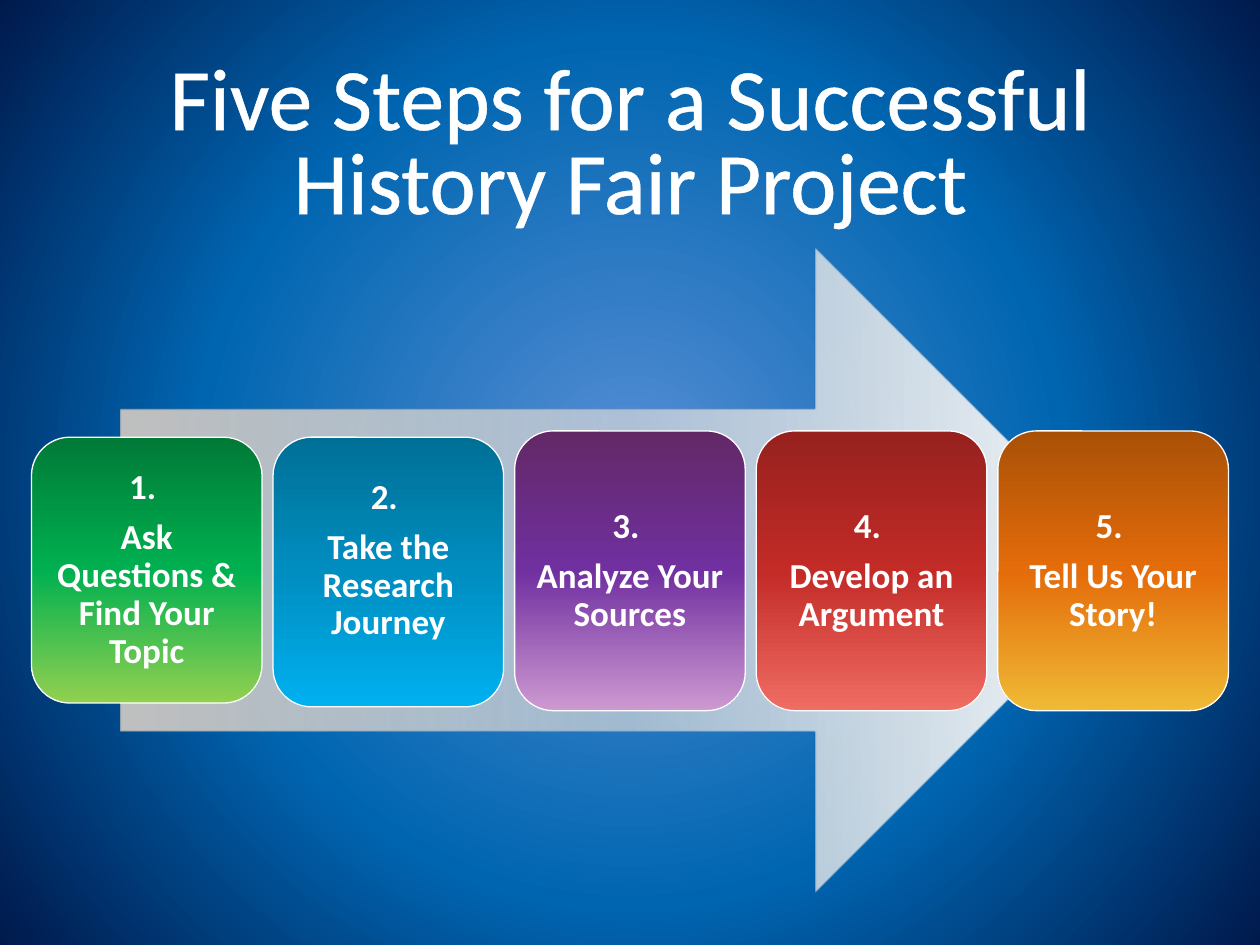
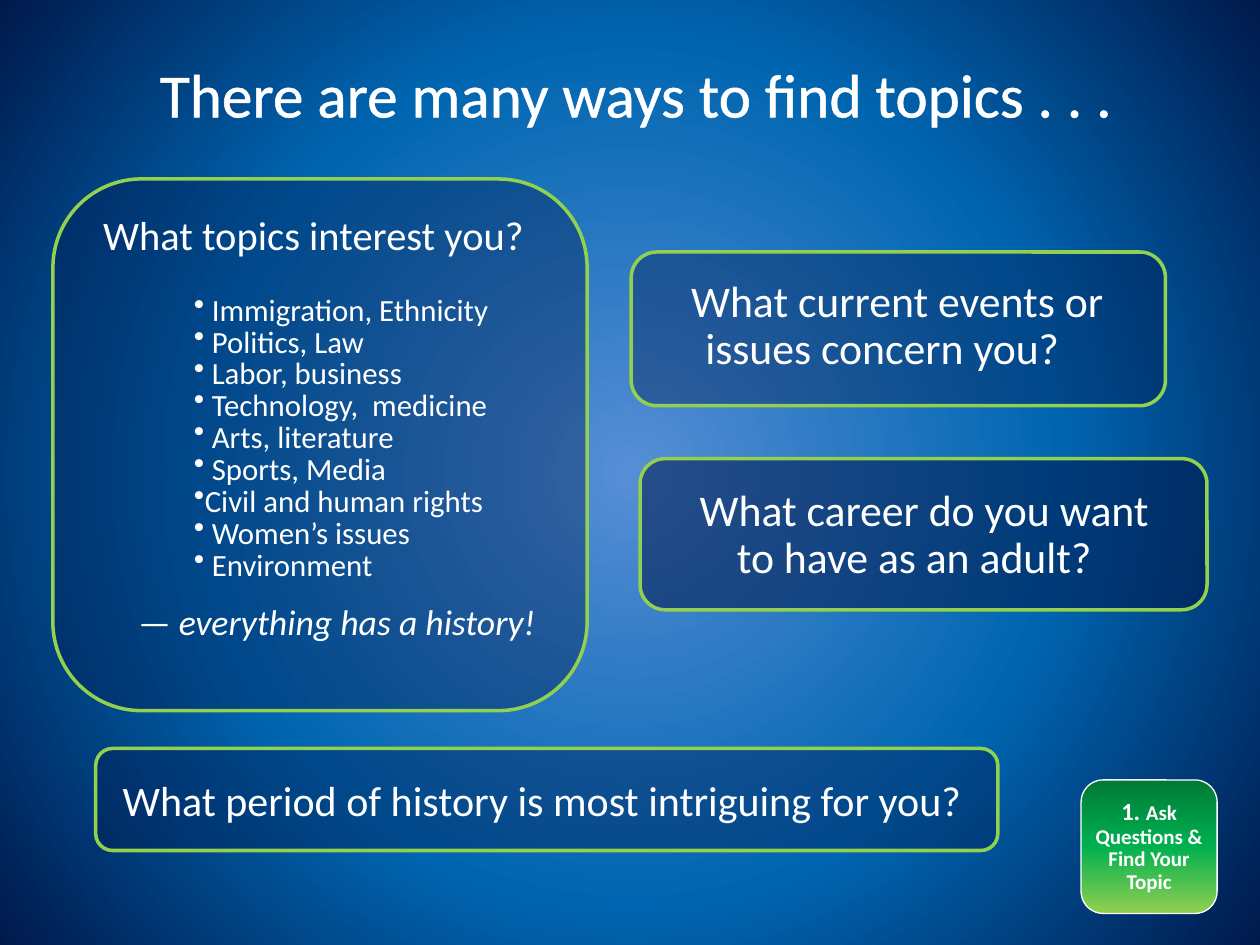
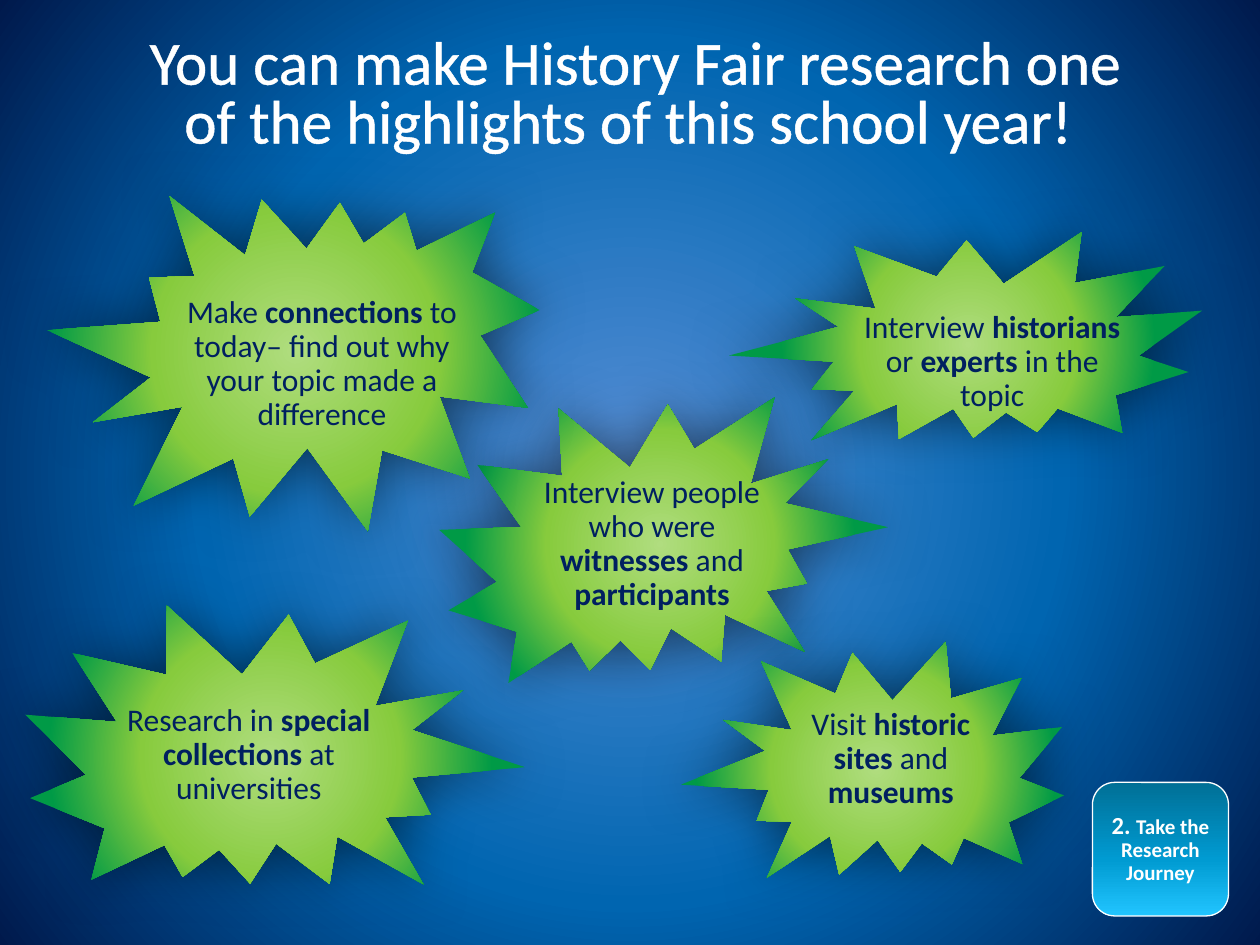
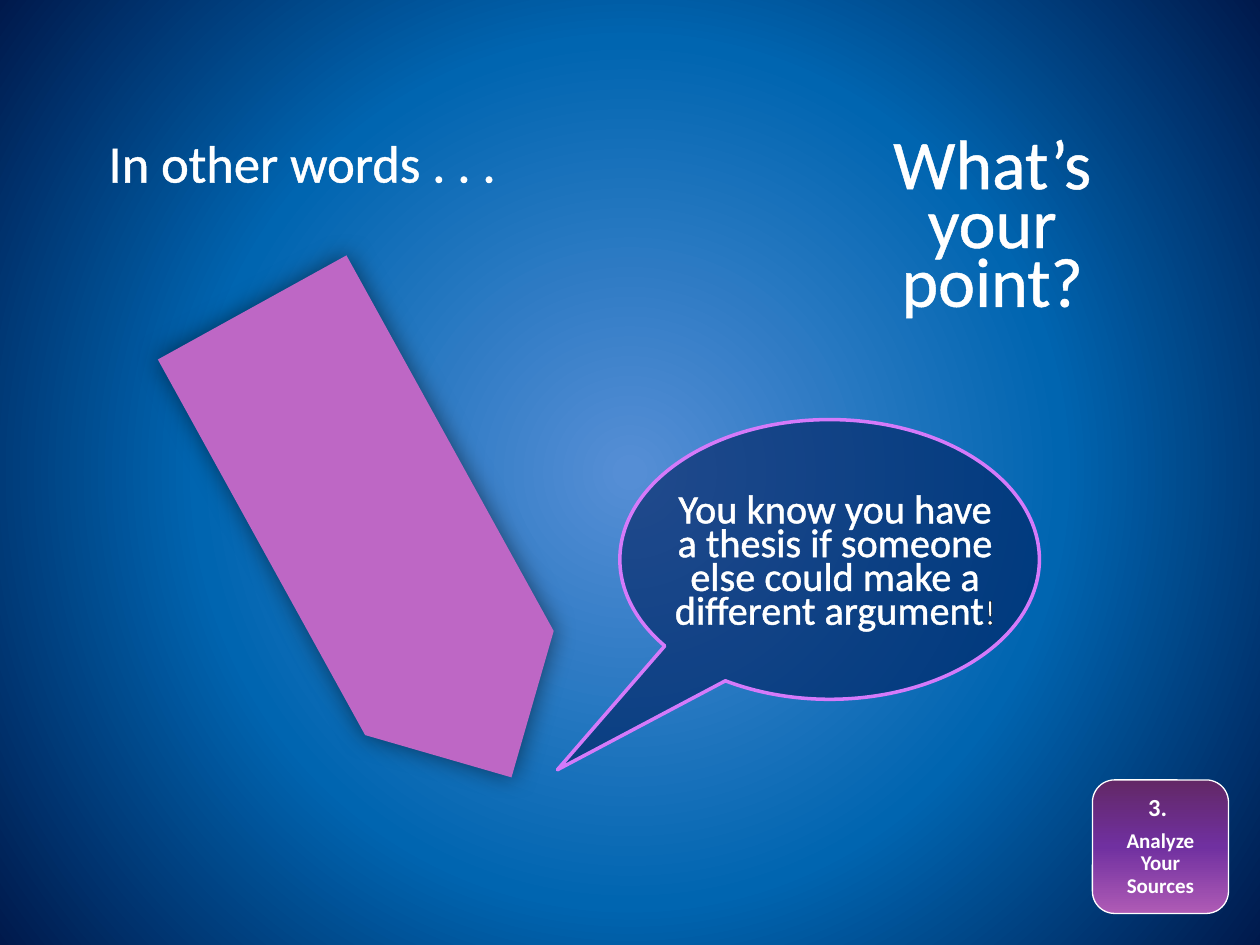
import pptx
import pptx.dml.color
import pptx.enum.shapes
import pptx.enum.text
import pptx.oxml
import pptx.oxml.ns
import pptx.util

Inches, Pt = pptx.util.Inches, pptx.util.Pt
SHAPE = pptx.enum.shapes.MSO_SHAPE
ALIGN = pptx.enum.text.PP_ALIGN
ANCHOR = pptx.enum.text.MSO_ANCHOR
qn = pptx.oxml.ns.qn
NS = pptx.oxml.ns.nsdecls("a", "p")
FONT = "Calibri"

COLORS = {
    "white": "FFFFFF", "black": "000000", "silver": "D9D9D9", "gray": "BFBFBF",
    "sky": "558ED5", "blue": "0065B0", "night": "00194C", "navy": "002060",
    "forest": "007A37", "green": "00B050", "lime": "92D050",
    "teal": "006F96", "azure": "008EC0", "cyan": "00B0F0",
    "azure_badge": "009BD2", "cyan_badge": "21C5FF",
    "plum": "622866", "purple": "7030A0", "lilac": "CD99D1", "orchid": "AF5BB5",
    "maroon": "96211E", "red": "C32B27", "coral": "EF6D63",
    "brown": "A95007", "orange": "E46C0A", "amber": "EFBA35",
    "seal_core": "B0DD7F", "seal_mid": "87CB3D", "seal_tip": "009A46",
    "pointer": "BE67C5", "callout": "D57AFA",
}

# Stops are (position, colour[, opacity]); an angle of None means circular
GRADIENTS = {
    "background": (None, [(1, "sky"), (55, "blue"), (100, "night")]),
    "arrow": (180, [(0, "white"), (50, "silver", 68), (100, "gray")]),
    "seal": (None, [(0, "seal_core"), (35, "seal_mid"), (60, "seal_tip")]),
    "ask": (90, [(0, "forest"), (50, "green"), (100, "lime")]),
    "research": (90, [(0, "teal"), (50, "azure"), (100, "cyan")]),
    "analyze": (90, [(0, "plum"), (50, "purple"), (100, "lilac")]),
    "argue": (90, [(0, "maroon"), (50, "red"), (100, "coral")]),
    "tell": (90, [(0, "brown"), (50, "orange"), (100, "amber")]),
    "research_badge": (90, [(0, "teal"), (58, "azure_badge"), (100, "cyan_badge")]),
    "analyze_badge": (90, [(0, "plum"), (50, "purple"), (100, "orchid")]),
}


# Formatting helpers
def rgb(name):
    return pptx.dml.color.RGBColor.from_string(COLORS[name])


def color_xml(name, opacity=100):
    return (f'<a:srgbClr val="{COLORS[name]}">'
            f'<a:alpha val="{opacity * 1000}"/></a:srgbClr>')


def gradient_xml(name):
    angle, stops = GRADIENTS[name]
    gs = "".join(f'<a:gs pos="{pos * 1000}">{color_xml(*color)}</a:gs>'
                 for pos, *color in stops)
    if angle is None:
        run = ('<a:path path="circle"><a:fillToRect l="50000" t="50000" '
               'r="50000" b="50000"/></a:path>')
    else:
        run = f'<a:lin ang="{angle * 60000}" scaled="0"/>'
    return f'<a:gradFill {NS} rotWithShape="1"><a:gsLst>{gs}</a:gsLst>{run}</a:gradFill>'


def add_shape(s, kind, box, *, gradient=None, fill=None, opacity=100, line=None,
              width=0.75, rotation=0, flip="", shadow=None):
    sp = s.shapes.add_shape(kind, *map(Inches, box))
    sp.shadow.inherit = False
    sp.rotation = rotation
    props = sp.element.spPr
    for axis in flip:
        props.xfrm.set("flip" + axis, "1")
    if gradient:
        sp.fill.background()
        props.replace(props.find(qn("a:noFill")),
                      pptx.oxml.parse_xml(gradient_xml(gradient)))
    else:
        sp.fill.solid()
        sp.fill.fore_color.rgb = rgb(fill)
        if opacity < 100:
            clr = props.find(qn("a:solidFill"))[0]
            clr.append(pptx.oxml.parse_xml(f'<a:alpha {NS} val="{opacity * 1000}"/>'))
    if line:
        sp.line.color.rgb = rgb(line)
        sp.line.width = Pt(width)
    else:
        sp.line.fill.background()
    if shadow:
        blur, dark = shadow
        props.find(qn("a:effectLst")).append(pptx.oxml.parse_xml(
            f'<a:outerShdw {NS} blurRad="{Pt(blur)}" dist="0" dir="0" algn="ctr" '
            f'rotWithShape="0">{color_xml("black", dark)}</a:outerShdw>'))
    return sp


def add_box(s, box):
    tf = s.shapes.add_textbox(*map(Inches, box)).text_frame
    tf.word_wrap = True
    return tf


def add_text(tf, text, *, size, color="white", bold=False, italic=False, align=ALIGN.CENTER,
             spacing=0.9, before=0, after=0, left=0, indent=0, bullet=None, outline=None):
    """Add a paragraph; text is a string or a list of (string, run overrides)."""
    p = tf.paragraphs[0]
    if p.runs:
        p = tf.add_paragraph()
    p.alignment, p.line_spacing = align, spacing
    if before:
        p.space_before = Pt(before)
    if after:
        p.space_after = Pt(after)
    pr = p._p.get_or_add_pPr()
    pr.set("marL", str(Inches(left)))
    pr.set("indent", str(Inches(indent)))
    if bullet:
        pr.append(pptx.oxml.parse_xml(f'<a:buChar {NS} char="{bullet}"/>'))
    base = dict(size=size, bold=bold, italic=italic, outline=outline)
    for words, changes in [(text, {})] if isinstance(text, str) else text:
        fmt = {**base, **changes}
        r = p.add_run()
        r.text = words
        r.font.name, r.font.size = FONT, Pt(fmt["size"])
        r.font.bold, r.font.italic = fmt["bold"], fmt["italic"]
        r.font.color.rgb = rgb(color)
        if fmt["outline"]:
            r.font._element.insert(0, pptx.oxml.parse_xml(
                f'<a:ln {NS} w="{Pt(1)}"><a:solidFill>{color_xml(fmt["outline"])}'
                '</a:solidFill></a:ln>'))


# Parts shared by the slides
def set_background(prs):
    cSld = prs.slide_master.element.cSld
    for bg in cSld.findall(qn("p:bg")):
        cSld.remove(bg)
    cSld.insert(0, pptx.oxml.parse_xml(
        f'<p:bg {NS}><p:bgPr>{gradient_xml("background")}<a:effectLst/></p:bgPr></p:bg>'))


def add_title(s, box, text, size=35, spacing=0.8):
    add_text(add_box(s, box), text, size=size, spacing=spacing, outline="white")


def step_tile(s, box, gradient, paragraphs, inset, after):
    sp = add_shape(s, SHAPE.ROUNDED_RECTANGLE, box, gradient=gradient, line="white")
    tf = sp.text_frame
    tf.word_wrap = True
    tf.vertical_anchor = ANCHOR.MIDDLE
    tf.margin_left = tf.margin_right = tf.margin_top = tf.margin_bottom = Inches(inset)
    for text, size in paragraphs:
        add_text(tf, text, size=size, bold=True, after=after)
    return tf


def badge(s, left, top, gradient, paragraphs, inset=0.03):
    step_tile(s, (left, top, 1.08, 1.06), gradient, paragraphs, inset, after=4.5)


# Slide 1: five steps on an arrow
def steps_slide(s):
    add_title(s, (0.67, 0.45, 8.67, 1.46),
              "Five Steps for a Successful History Fair Project", size=50)
    add_shape(s, SHAPE.RIGHT_ARROW, (0.96, 1.97, 8.07, 5.11), gradient="arrow")
    step_row(s, (0.25, 3.42, 9.5, 2.22), [
        ("ask", "Ask Questions & Find Your Topic", 0.05, 2.11),
        ("research", "Take the Research Journey", 0.05, 2.14),
        ("analyze", "Analyze Your Sources", 0, 2.22),
        ("argue", "Develop an Argument", 0, 2.22),
        ("tell", "Tell Us Your Story!", 0, 2.22),
    ])


def step_row(s, box, steps):
    left, top, width, _ = box
    tile = 1.83
    pitch = (width - tile) / (len(steps) - 1)
    for i, (gradient, label, drop, height) in enumerate(steps):
        tf = step_tile(s, (left + i * pitch, top + drop, tile, height), gradient,
                       [(f"{i + 1}. ", 20), (label, 20)], 0.08, after=7)
        if gradient == "research":
            tf.margin_bottom = Inches(0.26)  # this label sits a little higher


# Slide 2: questions in outlined panels
def panel(s, box, opacity):
    add_shape(s, SHAPE.ROUNDED_RECTANGLE, box, fill="night", opacity=opacity,
              line="lime", width=2)


def question(s, box, opacity, text_box, text, size=25, indent=0.0):
    panel(s, box, opacity)
    add_text(add_box(s, text_box), text, size=size, indent=indent)


def interests(s, box):
    left, top, _, _ = box
    panel(s, box, 37)
    tf = add_box(s, (left + 0.08, top + 0.3, 4.41, 3.9))
    fmt = dict(align=ALIGN.LEFT, spacing=0.7)
    add_text(tf, "What topics interest you?", size=23.1, left=0.22, **fmt)
    topics = [" Immigration, Ethnicity", " Politics, Law", " Labor, business",
              " Technology,  medicine", " Arts, literature", " Sports, Media",
              "Civil and human rights", " Women’s issues", " Environment"]
    for i, topic in enumerate(topics):
        add_text(tf, topic, size=17.6, left=0.94, bullet="•",
                 before=3.4 if i else 25, **fmt)
    add_text(tf, [("— ", {}), ("everything has a history!", {"italic": True})],
             size=20.4, left=0.5, before=17, **fmt)


def topics_slide(s):
    add_title(s, (0.51, 0.51, 9.08, 0.58), "There are many ways to find topics . . .")
    interests(s, (0.42, 1.42, 4.24, 4.22))
    question(s, (5.01, 2, 4.24, 1.22), 38, (4.83, 2.17, 4.42, 1.08),
             "What current events or issues concern you? ", indent=0.16)
    question(s, (5.08, 3.64, 4.5, 1.2), 55, (5.17, 3.83, 4.17, 0.97),
             "What career do you want to have as an adult?", indent=0.16)
    question(s, (0.76, 5.94, 7.16, 0.81), 38, (0.76, 6.14, 7.16, 0.5),
             "What period of history is most intriguing for you? ", size=24)
    badge(s, 8.58, 6.19, "ask",
          [([("1. ", {"size": 14}), ("Ask Questions & Find Your Topic", {})], 12)])


# Slide 3: research ideas in star bursts
def burst(s, box, rotation, flip, text_box, text):
    """Words between asterisks are bold."""
    add_shape(s, SHAPE.EXPLOSION2, box, gradient="seal", rotation=rotation,
              flip=flip, shadow=(30, 52))
    runs = [(part, {"bold": i % 2 == 1})
            for i, part in enumerate(text.split("*")) if part]
    add_text(add_box(s, text_box), runs, size=18, color="navy", after=6.3)


def research_slide(s):
    add_title(s, (0.92, 0.25, 8.25, 1.06),
              "You can make History Fair research one of the highlights of this school year! ")
    bursts = [
        ((3.5, 2.99, 3.48, 2.66), 12.1, "", (4.05, 3.73, 2.25, 1.19),
         "Interview people who were *witnesses* and *participants*"),
        ((5.82, 1.76, 3.73, 1.95), 346, "H", (6.71, 2.42, 2.33, 0.92),
         "Interview *historians* or *experts* in the topic"),
        ((0.47, 1.15, 3.75, 3.27), 23.3, "HV", (1.38, 2.3, 2.35, 1.19),
         "Make *connections* to today– find out why your topic made a difference"),
        ((0.19, 4.65, 3.91, 2.71), 17.3, "", (0.7, 5.54, 2.55, 0.92),
         "Research in *special collections *at universities"),
        ((5.46, 4.98, 2.99, 2.24), 339.2, "H", (6.27, 5.57, 1.6, 0.92),
         "Visit *historic sites *and *museums*"),
    ]
    for item in bursts:
        burst(s, *item)
    badge(s, 8.67, 6.21, "research_badge",
          [([("2. ", {"size": 14}), ("Take the Research Journey", {})], 12)])


# Slide 4: the thesis
def thesis_callout(s, box):
    left, top, _, _ = box
    sp = add_shape(s, SHAPE.OVAL_CALLOUT, box, fill="navy", opacity=62,
                   line="callout", width=2)
    sp.adjustments[0], sp.adjustments[1] = -0.649, 0.752
    add_text(add_box(s, (left + 0.26, top + 0.56, 2.9, 1.45)),
             [("You know you have a thesis if someone else could make a different argument", {}),
              ("!", {"size": 20, "outline": "black"})],
             size=23, spacing=0.7, outline="white")


def point_slide(s):
    add_title(s, (6.5, 1.08, 2.75, 1.5), "What’s your point?", size=40, spacing=0.7)
    add_shape(s, SHAPE.PENTAGON, (0.9, 3.45, 4.26, 1.71), fill="pointer",
              rotation=61.1, shadow=(14, 50))
    add_title(s, (0.42, 1.08, 3.96, 1.5), "In other words . . .", size=30)
    thesis_callout(s, (4.92, 3.33, 3.33, 2.22))
    badge(s, 8.67, 6.19, "analyze_badge",
          [("3. ", 14), ("Analyze Your Sources", 12)], inset=0.12)


def main():
    prs = pptx.Presentation()
    prs.slide_width, prs.slide_height = Inches(10), Inches(7.5)
    set_background(prs)
    for build in (steps_slide, topics_slide, research_slide, point_slide):
        build(prs.slides.add_slide(prs.slide_layouts[6]))
    prs.save("out.pptx")


if __name__ == "__main__":
    main()
